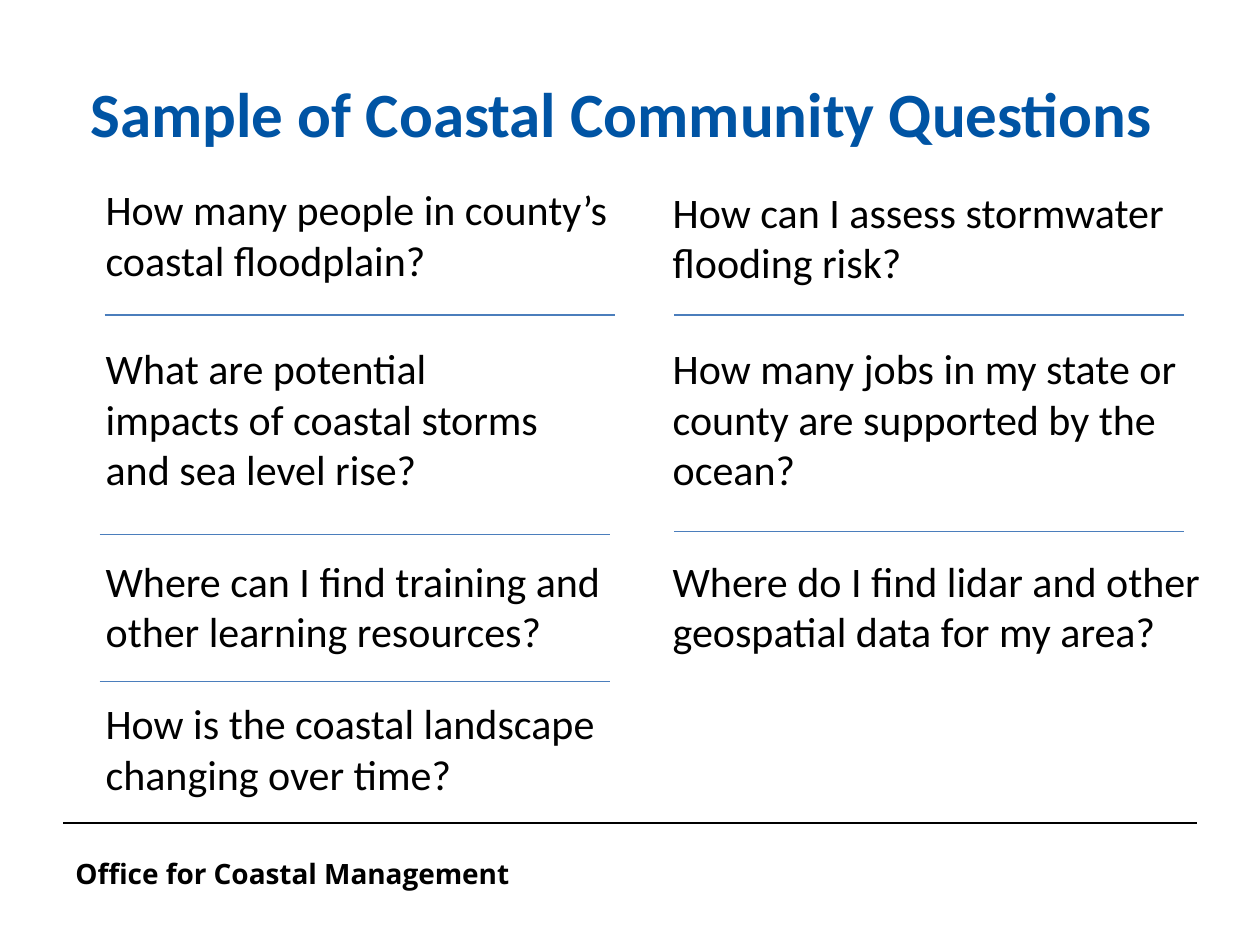
from lxml import etree
from pptx import Presentation
from pptx.dml.color import RGBColor
from pptx.enum import shapes, text
from pptx.oxml.ns import qn
from pptx.util import Inches, Pt

TITLE = "Sample of Coastal Community Questions "
FOOTER = "Office for Coastal Management"
LEFT, RIGHT = 0.74, 5.24
QUESTIONS = [  # left, top, width, height, wording
    (LEFT, 1.41, 4.54, 0.91, "How many people in county’s coastal floodplain?"),
    (LEFT, 2.67, 3.75, 1.31, "What are potential impacts of coastal storms and sea level rise?"),
    (LEFT, 4.36, 4.14, 0.91, "Where can I find training and other learning resources?"),
    (LEFT, 5.49, 4.1, 0.91, "How is the coastal landscape changing over time?"),
    (RIGHT, 1.43, 4.22, 0.91, "How can I assess stormwater flooding risk?"),
    (RIGHT, 2.67, 4.22, 1.31, "How many jobs in my state or county are supported by the ocean?"),
    (RIGHT, 4.36, 4.4, 0.91, "Where do I find lidar and other geospatial data for my area?"),
]
DIVIDER_WIDTH = 4.05
DIVIDERS = [(0.83, 2.5), (0.79, 4.24), (0.79, 5.41), (5.35, 2.5), (5.35, 4.22)]
BLACK, NAVY, BLUE = "000000", "0054A4", "4B7EBC"


def color(value):
    return RGBColor.from_string(value)


def place(shape, left, top, width, height):
    shape.left, shape.top = Inches(left), Inches(top)
    shape.width, shape.height = Inches(width), Inches(height)


def write(box, wording, size, font="Calibri", fill=BLACK, bold=False):
    para = box.text_frame.paragraphs[0]
    span = para.add_run()
    span.text = wording
    span.font.name, span.font.size, span.font.bold = font, Pt(size), bold
    span.font.color.rgb = color(fill)
    return para


def add_text(page, left, top, width, height, wording, size, wrap=True, **style):
    box = page.shapes.add_textbox(*map(Inches, (left, top, width, height)))
    box.text_frame.word_wrap = wrap
    box.text_frame.auto_size = text.MSO_AUTO_SIZE.SHAPE_TO_FIT_TEXT
    write(box, wording, size, **style)


def add_rule(page, left, top, width, fill, weight):
    """Draw a horizontal line without a shadow."""
    rule = page.shapes.add_connector(
        shapes.MSO_CONNECTOR.STRAIGHT,
        *map(Inches, (left, top, left + width, top)))
    rule.line.color.rgb = color(fill)
    rule.line.width = Pt(weight)
    etree.SubElement(rule._element.spPr, qn("a:effectLst"))


def main():
    deck = Presentation()
    deck.slide_width, deck.slide_height = Inches(10), Inches(7.5)
    page = deck.slides.add_slide(deck.slide_layouts[5])

    add_rule(page, 0.5, 6.53, 9, BLACK, 1)
    add_text(page, 0.5, 6.75, 3.69, 0.37, FOOTER, 16, wrap=False,
             font="Open Sans", bold=True)

    title = page.shapes.title
    place(title, -0.01, 0.55, 10, 0.69)
    title.text_frame.auto_size = text.MSO_AUTO_SIZE.NONE
    title.text_frame.vertical_anchor = text.MSO_ANCHOR.MIDDLE
    write(title, TITLE, 36, fill=NAVY, bold=True).alignment = text.PP_ALIGN.CENTER

    for left, top, width, height, wording in QUESTIONS:
        add_text(page, left, top, width, height, wording, 24)
    for left, top in DIVIDERS:
        add_rule(page, left, top, DIVIDER_WIDTH, BLUE, 0.75)

    deck.save("out.pptx")


if __name__ == "__main__":
    main()
